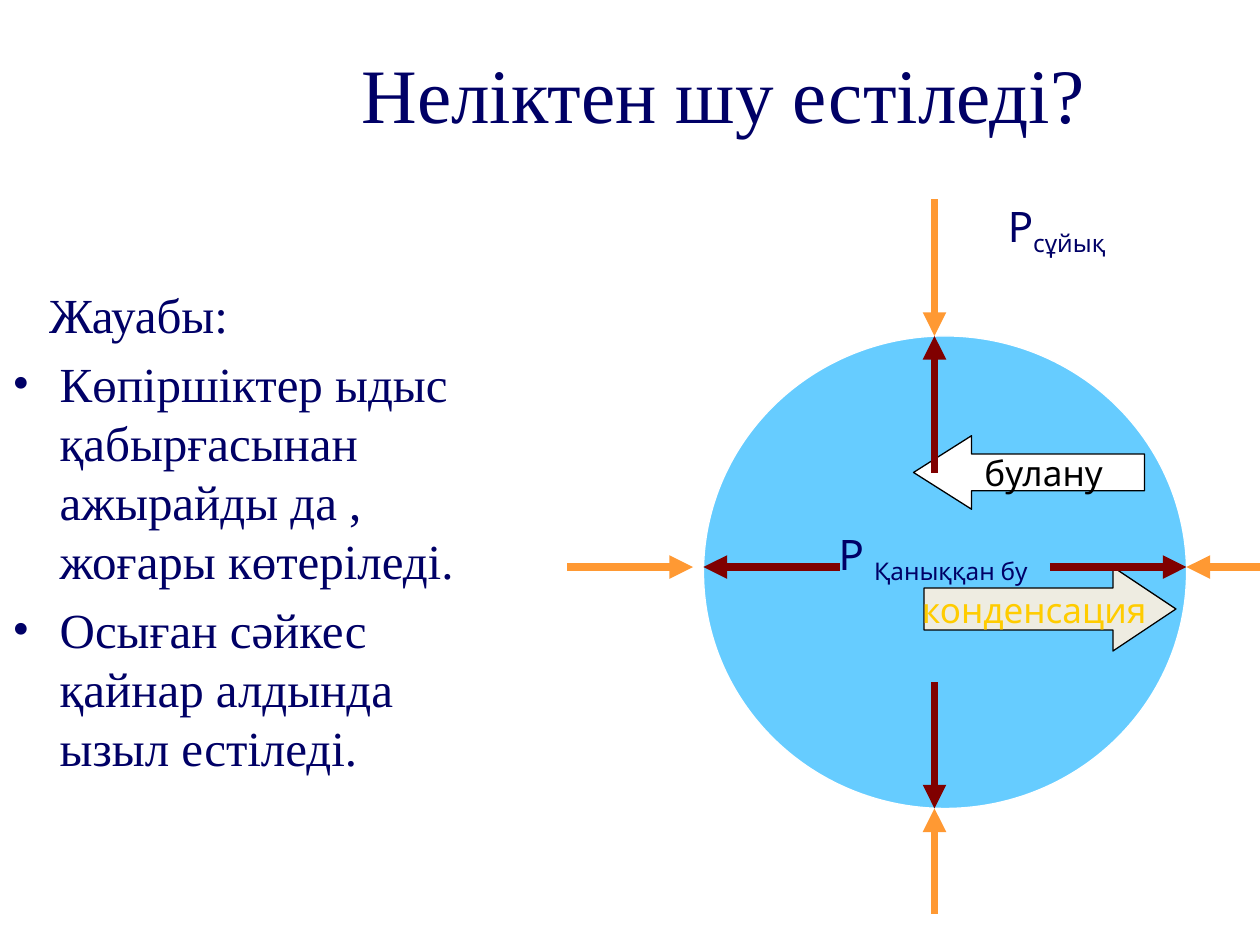
from dataclasses import dataclass

from lxml.etree import SubElement
from pptx import Presentation
from pptx.dml.color import RGBColor
from pptx.enum.shapes import MSO_CONNECTOR, MSO_SHAPE
from pptx.enum.text import MSO_ANCHOR, MSO_AUTO_SIZE, PP_ALIGN
from pptx.oxml.ns import qn
from pptx.util import Emu, Pt


@dataclass(frozen=True)
class Theme:
    navy: str = "000066"
    sky: str = "66CCFF"
    white: str = "FFFFFF"
    black: str = "000000"
    cream: str = "EEECE1"
    yellow: str = "FFCC00"
    maroon: str = "800000"
    orange: str = "FF9933"
    serif: str = "Times New Roman"
    sans: str = "Karla"
    title: int = 44
    body: int = 28
    symbol: int = 24
    label: int = 20
    outline: float = 0.75
    force: float = 4.5


@dataclass(frozen=True)
class Box:
    x: int
    y: int
    w: int
    h: int


@dataclass(frozen=True)
class Force:
    start: tuple[int, int]
    end: tuple[int, int]


@dataclass(frozen=True)
class Process:
    text: str
    box: Box
    preset: MSO_SHAPE
    head: float
    fill: str
    color: str


@dataclass(frozen=True)
class Pressure:
    subscript: str
    box: Box
    wrap: bool
    symbol: str = "Р"


T = Theme()
PX = 7620  # EMU per px, 120 px to the inch
SLIDE = Box(0, 0, 1200, 900)
AXIS_X, AXIS_Y = 890, 540
BUBBLE = Box(670, 320, 460, 450)
LEFT, RIGHT = BUBBLE.x, BUBBLE.x + BUBBLE.w
TOP, BOTTOM = BUBBLE.y, BUBBLE.y + BUBBLE.h
HANGING = 45

PROCESSES = [
    Process("булану", Box(870, 415, 220, 70), MSO_SHAPE.LEFT_ARROW, 0.79, T.white, T.black),
    Process("конденсация", Box(880, 540, 240, 80), MSO_SHAPE.RIGHT_ARROW, 0.75, T.cream, T.yellow),
]
VAPOUR_FORCES = [
    Force((AXIS_X, 450), (AXIS_X, TOP)),
    Force((AXIS_X, 650), (AXIS_X, BOTTOM)),
    Force((800, AXIS_Y), (LEFT, AXIS_Y)),
    Force((1000, AXIS_Y), (RIGHT, AXIS_Y)),
]
LIQUID_FORCES = [
    Force((AXIS_X, 190), (AXIS_X, TOP)),
    Force((540, AXIS_Y), (660, AXIS_Y)),
    Force((AXIS_X, 870), (AXIS_X, BOTTOM)),
    Force((SLIDE.w, AXIS_Y), (RIGHT, AXIS_Y)),
]
VAPOUR = Pressure("Қаныққан бу", Box(787, 497, 290, 60), True, "Р ")
LIQUID = Pressure("сұйық", Box(948, 185, 120, 60), False)
HEADING = "Жауабы:"
ANSWERS = [
    "Көпіршіктер ыдыс қабырғасынан ажырайды да , жоғары көтеріледі.",
    "Осыған сәйкес қайнар алдында ызыл естіледі.",
]


def px(n: int) -> Emu:
    return Emu(n * PX)


def place(box: Box) -> tuple[Emu, ...]:
    return px(box.x), px(box.y), px(box.w), px(box.h)


def add_run(p, text: str, *, size: int, font: str = T.sans, color: str = T.navy,
            baseline: int = 0) -> None:
    """Append formatted text; baseline is a percentage, negative for a subscript."""
    r = p.add_run()
    r.text = text
    r.font.size, r.font.name = Pt(size), font
    r.font.color.rgb = RGBColor.from_string(color)
    if baseline:
        r.font._element.set("baseline", str(baseline * 1000))


def add_shape(s, preset: MSO_SHAPE, box: Box, fill: str, line: str):
    sp = s.shapes.add_shape(preset, *place(box))
    sp.shadow.inherit = False
    sp.fill.solid()
    sp.fill.fore_color.rgb = RGBColor.from_string(fill)
    sp.line.color.rgb = RGBColor.from_string(line)
    sp.line.width = Pt(T.outline)
    return sp


def add_process(s, item: Process) -> None:
    sp = add_shape(s, item.preset, item.box, item.fill, T.black)
    sp.adjustments[0], sp.adjustments[1] = 0.5, item.head
    tf = sp.text_frame
    tf.word_wrap = False
    tf.vertical_anchor = MSO_ANCHOR.MIDDLE
    p = tf.paragraphs[0]
    p.alignment = PP_ALIGN.CENTER
    add_run(p, item.text, size=T.label, color=item.color)


def add_force(s, force: Force, color: str) -> None:
    line = s.shapes.add_connector(MSO_CONNECTOR.STRAIGHT,
                                  *map(px, force.start + force.end))
    line.line.color.rgb = RGBColor.from_string(color)
    line.line.width = Pt(T.force)
    SubElement(line.line._get_or_add_ln(), qn("a:tailEnd"), type="triangle")
    SubElement(line._element.spPr, qn("a:effectLst"))


def add_pressure(s, item: Pressure) -> None:
    tf = s.shapes.add_textbox(*place(item.box)).text_frame
    tf.word_wrap = item.wrap
    tf.auto_size = MSO_AUTO_SIZE.SHAPE_TO_FIT_TEXT
    p = tf.paragraphs[0]
    add_run(p, item.symbol, size=T.symbol)
    add_run(p, item.subscript, size=T.symbol, baseline=-25)


def add_body_paragraph(p, text: str, *, margin: int, bullet: bool) -> None:
    p.space_before = Pt(6)
    pPr = p._p.get_or_add_pPr()
    pPr.set("marL", str(px(margin)))
    if bullet:
        pPr.set("indent", str(-px(margin)))
        SubElement(pPr, qn("a:buFont"), typeface=T.serif)
        SubElement(pPr, qn("a:buChar"), char="•")
    add_run(p, text, size=T.body, font=T.serif)


def set_title(s) -> None:
    title = s.shapes.title
    title.left, title.top, title.width, title.height = place(Box(178, 28, 1022, 120))
    tf = title.text_frame
    tf.auto_size = MSO_AUTO_SIZE.NONE
    tf.vertical_anchor = MSO_ANCHOR.MIDDLE
    p = tf.paragraphs[0]
    p.alignment = PP_ALIGN.CENTER
    add_run(p, "Неліктен шу естіледі?", size=T.title, font=T.serif)


def add_body(s) -> None:
    tf = s.shapes.add_textbox(*place(Box(0, 265, 500, 540))).text_frame
    tf.word_wrap = True
    add_body_paragraph(tf.paragraphs[0], HEADING, margin=35, bullet=False)
    for answer in ANSWERS:
        add_body_paragraph(tf.add_paragraph(), answer, margin=HANGING, bullet=True)


def main() -> None:
    prs = Presentation()
    prs.slide_width, prs.slide_height = px(SLIDE.w), px(SLIDE.h)
    s = prs.slides.add_slide(prs.slide_layouts[5])
    set_title(s)
    add_body(s)
    add_shape(s, MSO_SHAPE.OVAL, BUBBLE, T.sky, T.white)
    for process in PROCESSES:
        add_process(s, process)
    for force in VAPOUR_FORCES:
        add_force(s, force, T.maroon)
    add_pressure(s, VAPOUR)
    for force in LIQUID_FORCES:
        add_force(s, force, T.orange)
    add_pressure(s, LIQUID)
    prs.save("out.pptx")


if __name__ == "__main__":
    main()
